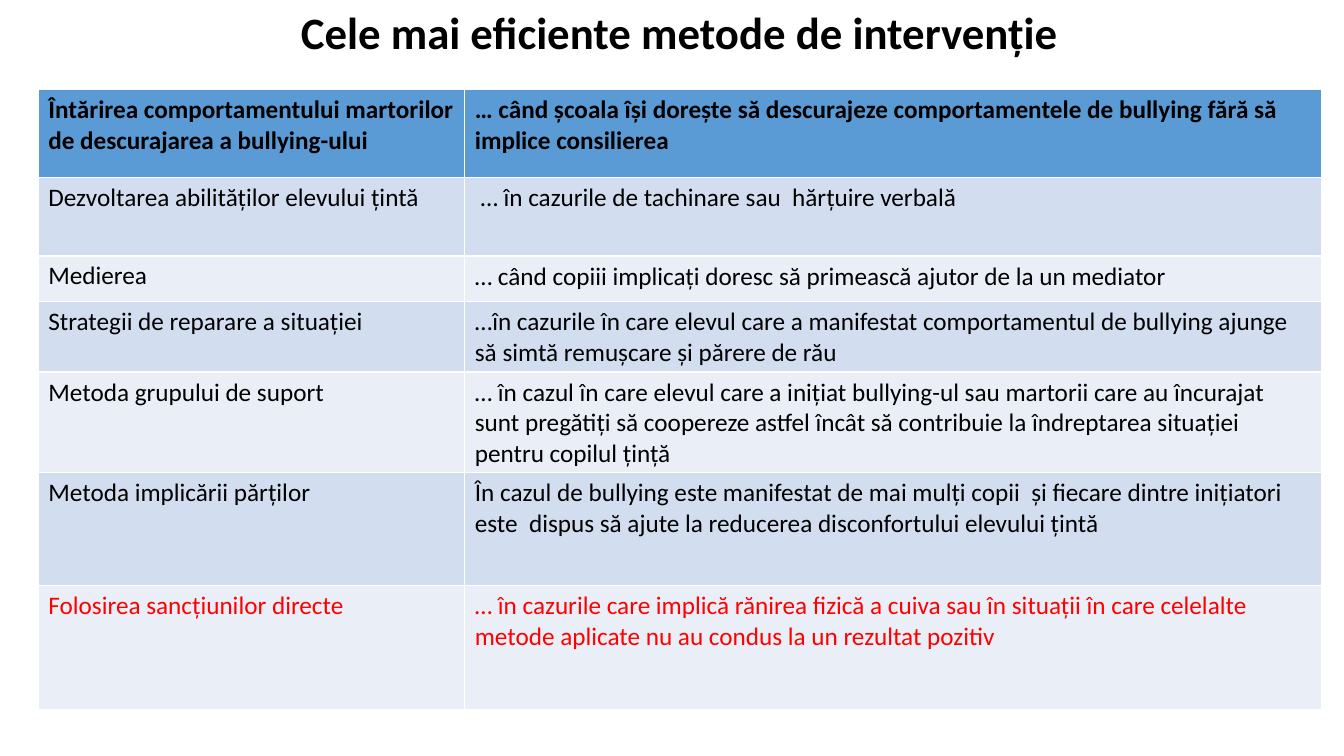
from pptx import Presentation
from pptx.dml.color import RGBColor
from pptx.enum.text import MSO_ANCHOR, PP_ALIGN
from pptx.util import Inches, Pt

CENTER = PP_ALIGN.CENTER
MIDDLE = MSO_ANCHOR.MIDDLE
FONT = "Calibri"
BLACK = RGBColor(0x00, 0x00, 0x00)
RED = RGBColor(0xFF, 0x00, 0x00)
HEADER_BLUE = RGBColor(0x5B, 0x9B, 0xD5)
BAND_DARK = RGBColor(0xD2, 0xDE, 0xEF)
BAND_LIGHT = RGBColor(0xEA, 0xEF, 0xF7)

TITLE = "Cele mai eficiente metode de intervenție"
COLUMN_WIDTHS = [4.23, 8.5]
ROW_HEIGHTS = [0.87, 0.78, 0.45, 0.67, 0.96, 1.12, 1.23]
METHODS = [
    ("Întărirea comportamentului martorilor de descurajarea a bullying-ului",
     "… când școala își dorește să descurajeze comportamentele de bullying "
     "fără să implice consilierea"),
    ("Dezvoltarea abilităților elevului țintă",
     " … în cazurile de tachinare sau  hărțuire verbală"),
    ("Medierea",
     "… când copiii implicați doresc să primească ajutor de la un mediator"),
    ("Strategii de reparare a situației",
     "…în cazurile în care elevul care a manifestat comportamentul de bullying "
     "ajunge să simtă remușcare și părere de rău"),
    ("Metoda grupului de suport",
     "… în cazul în care elevul care a inițiat bullying-ul sau martorii care au "
     "încurajat sunt pregătiți să coopereze astfel încât să contribuie la "
     "îndreptarea situației pentru copilul țință"),
    ("Metoda implicării părților",
     "În cazul de bullying este manifestat de mai mulți copii  și fiecare dintre "
     "inițiatori este  dispus să ajute la reducerea disconfortului elevului țintă"),
    ("Folosirea sancțiunilor directe",
     "… în cazurile care implică rănirea fizică a cuiva sau în situații în care "
     "celelalte metode aplicate nu au condus la un rezultat pozitiv"),
]
MEDIATION_ROW = 2


def write_text(frame, text, size, color, bold):
    frame.word_wrap = True
    para = frame.paragraphs[0]
    para.text = text
    font = para.runs[0].font
    font.name = FONT
    font.size = Pt(size)
    font.bold = bold
    font.color.rgb = color
    return para


def add_title(page):
    box = page.shapes.add_textbox(Inches(0.99), Inches(0), Inches(11.5), Inches(0.7))
    box.text_frame.vertical_anchor = MIDDLE
    para = write_text(box.text_frame, TITLE, 32, BLACK, True)
    para.alignment = CENTER
    para.line_spacing = 0.9


def row_fill(row):
    if row == 0:
        return HEADER_BLUE
    return BAND_DARK if row % 2 else BAND_LIGHT


def fill_cell(cell, text, row):
    cell.fill.solid()
    cell.fill.fore_color.rgb = row_fill(row)
    color = RED if row == len(METHODS) - 1 else BLACK
    return write_text(cell.text_frame, text, 18, color, row == 0)


def set_mediation_spacing(cell):
    cell.margin_left = cell.margin_right = Inches(0.1)
    cell.margin_top = cell.margin_bottom = Inches(0.1)
    para = cell.text_frame.paragraphs[0]
    para.line_spacing = Pt(18)
    para.space_after = Pt(8)


def add_methods_table(page):
    table = page.shapes.add_table(
        len(METHODS), len(COLUMN_WIDTHS), Inches(0.38), Inches(0.89),
        Inches(sum(COLUMN_WIDTHS)), Inches(sum(ROW_HEIGHTS))).table
    for column, width in zip(table.columns, COLUMN_WIDTHS):
        column.width = Inches(width)
    for row, height in enumerate(ROW_HEIGHTS):
        table.rows[row].height = Inches(height)
        for column, text in enumerate(METHODS[row]):
            fill_cell(table.cell(row, column), text, row)
    set_mediation_spacing(table.cell(MEDIATION_ROW, 0))


def main():
    deck = Presentation()
    deck.slide_width = Inches(13.33)
    deck.slide_height = Inches(7.5)
    page = deck.slides.add_slide(deck.slide_layouts[6])
    add_title(page)
    add_methods_table(page)
    deck.save("out.pptx")


if __name__ == "__main__":
    main()
